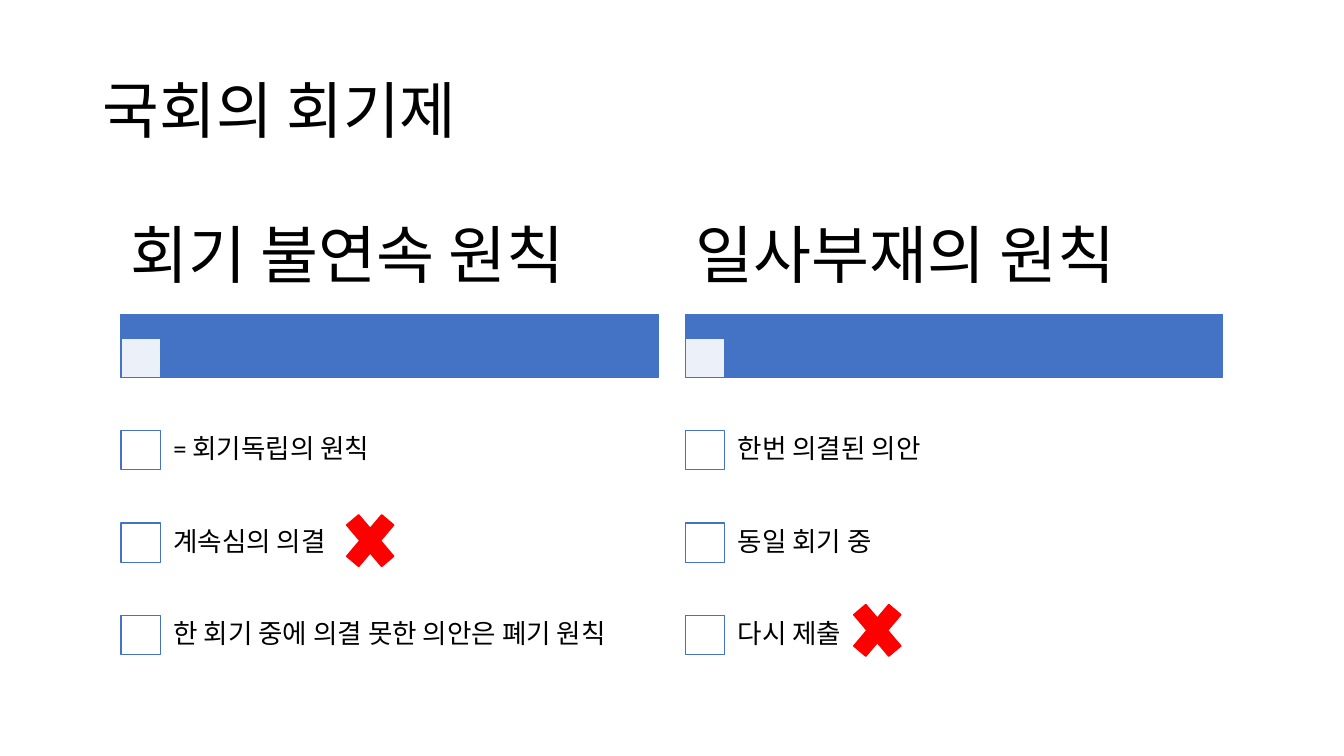
from dataclasses import dataclass

from lxml.etree import SubElement
from pptx import Presentation
from pptx.dml.color import RGBColor
from pptx.enum.shapes import MSO_SHAPE as Preset
from pptx.enum.text import MSO_VERTICAL_ANCHOR as Anchor
from pptx.oxml.ns import qn
from pptx.shapes.autoshape import Shape
from pptx.slide import Slide
from pptx.util import Cm, Pt

FONT = "Calibri"
BLUE = "4472C4"
WHITE = "FFFFFF"
RED = "FF0000"
BLACK = "000000"

COLUMN_WIDTH = 13.54
HEADING_TOP = 5.08
HEADING_HEIGHT = 2.87
BAR_TOP = 7.92
BAR_HEIGHT = 1.6
BOX_SIZE = 0.99
ITEM_INDENT = 0.94
ITEM_TOP = 10.19
ITEM_HEIGHT = 2.31
ITEM_STEP = 2.33


@dataclass(frozen=True)
class Principle:
    left: float
    heading: str
    items: tuple[str, ...]


@dataclass(frozen=True)
class Cross:
    left: float
    top: float


PRINCIPLES = (
    Principle(3.05, "회기 불연속 원칙", (
        "= 회기독립의 원칙",
        "계속심의 의결",
        "한 회기 중에 의결 못한 의안은 폐기 원칙",
    )),
    Principle(17.27, "일사부재의 원칙", (
        "한번 의결된 의안",
        "동일 회기 중",
        "다시 제출",
    )),
)
CROSSES = (Cross(8.48, 12.62), Cross(21.26, 14.88))


def color(value: str) -> RGBColor:
    return RGBColor.from_string(value)


def add_text(slide: Slide, text: str, *, left: float, top: float, width: float,
             height: float, size: float, inset_x: float = 0.25,
             inset_y: float = 0.13, space_after: float = 0) -> Shape:
    shape = slide.shapes.add_textbox(Cm(left), Cm(top), Cm(width), Cm(height))
    frame = shape.text_frame
    frame.word_wrap = True
    frame.vertical_anchor = Anchor.MIDDLE
    frame.margin_left = frame.margin_right = Cm(inset_x)
    frame.margin_top = frame.margin_bottom = Cm(inset_y)
    paragraph = frame.paragraphs[0]
    paragraph.line_spacing = 0.9
    paragraph.space_after = Pt(space_after)
    run = paragraph.add_run()
    run.text = text
    run.font.name = FONT
    run.font.size = Pt(size)
    run.font.color.rgb = color(BLACK)
    return shape


def add_block(slide: Slide, preset: Preset, left: float, top: float, width: float,
              height: float, fill: str, line: str, opacity: int = 100) -> Shape:
    shape = slide.shapes.add_shape(preset, Cm(left), Cm(top), Cm(width), Cm(height))
    shape.shadow.inherit = False
    shape.fill.solid()
    shape.fill.fore_color.rgb = color(fill)
    shape.line.color.rgb = color(line)
    shape.line.width = Pt(1)
    if opacity < 100:
        fill_color = shape.fill._xPr.find(qn("a:solidFill"))[0]
        SubElement(fill_color, qn("a:alpha")).set("val", str(opacity * 1000))
    return shape


def add_box(slide: Slide, left: float, top: float, opacity: int = 100) -> Shape:
    return add_block(slide, Preset.RECTANGLE, left, top, BOX_SIZE, BOX_SIZE,
                     WHITE, BLUE, opacity)


def add_principle(slide: Slide, principle: Principle) -> None:
    left = principle.left
    add_block(slide, Preset.RECTANGLE, left, BAR_TOP, COLUMN_WIDTH, BAR_HEIGHT, BLUE, BLUE)
    add_box(slide, left, BAR_TOP + BAR_HEIGHT - BOX_SIZE, opacity=90)
    add_text(slide, principle.heading, left=left, top=HEADING_TOP, width=COLUMN_WIDTH,
             height=HEADING_HEIGHT, size=45, inset_y=0.16, space_after=15.75)
    for index, item in enumerate(principle.items):
        top = ITEM_TOP + index * ITEM_STEP
        add_box(slide, left, top + (ITEM_HEIGHT - BOX_SIZE) / 2)
        add_text(slide, item, left=left + ITEM_INDENT, top=top,
                 width=COLUMN_WIDTH - ITEM_INDENT, height=ITEM_HEIGHT, size=19,
                 inset_x=0.38, inset_y=0.38, space_after=6.65)


def main() -> None:
    presentation = Presentation()
    presentation.slide_width = Cm(33.87)
    presentation.slide_height = Cm(19.05)
    slide = presentation.slides.add_slide(presentation.slide_layouts[6])
    add_text(slide, "국회의 회기제", left=2.34, top=1.02, width=29.21, height=3.68, size=44)
    for principle in PRINCIPLES:
        add_principle(slide, principle)
    for cross in CROSSES:
        add_block(slide, Preset.MATH_MULTIPLY, cross.left, cross.top, 1.7, 2.01, RED, RED)
    presentation.save("out.pptx")


if __name__ == "__main__":
    main()
